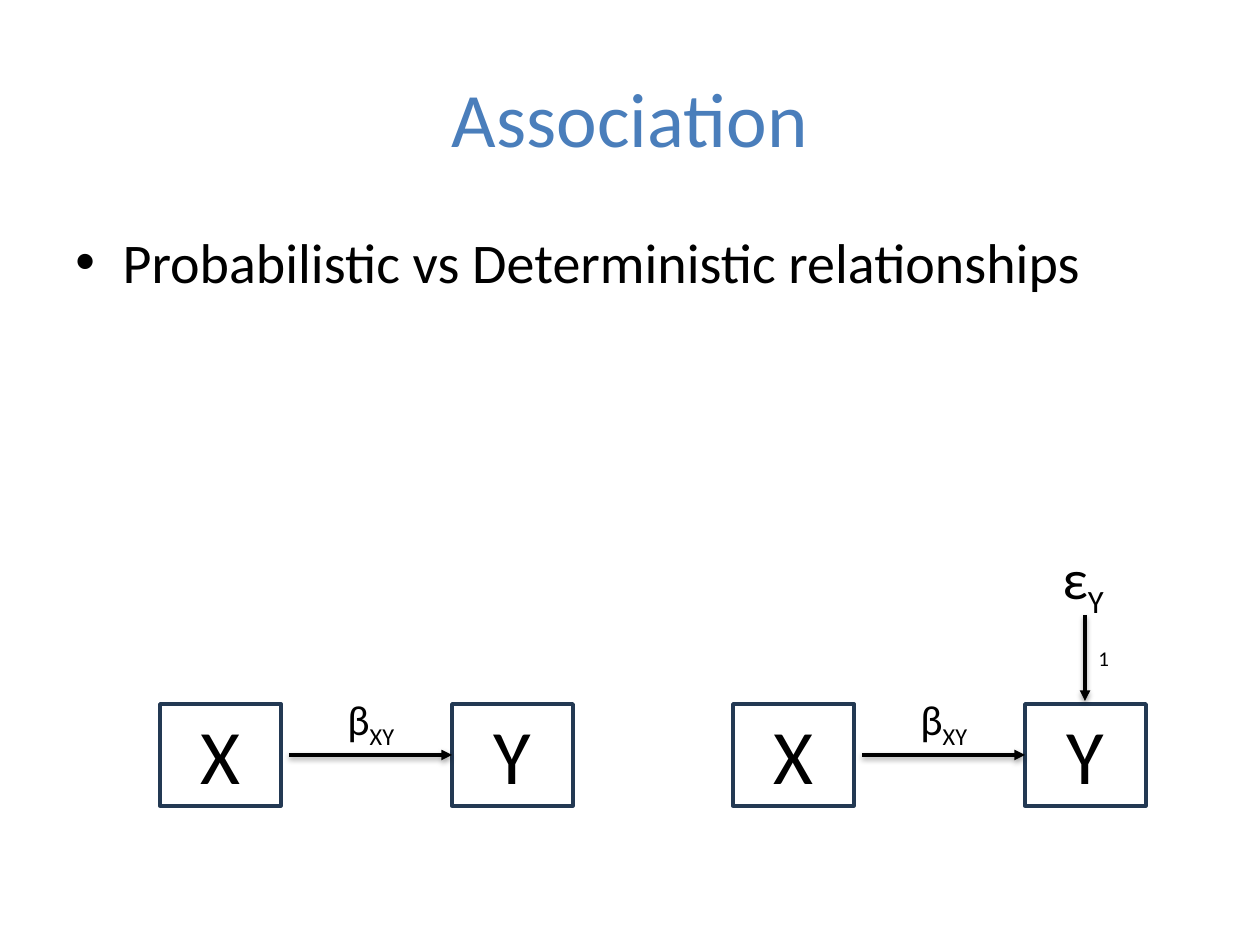
from pptx import Presentation
from pptx.dml.color import RGBColor
from pptx.enum.shapes import MSO_CONNECTOR, MSO_SHAPE
from pptx.enum.text import MSO_ANCHOR, MSO_AUTO_SIZE, PP_ALIGN
from pptx.oxml import parse_xml
from pptx.oxml.ns import nsdecls, qn
from pptx.util import Emu, Pt

STRAIGHT = MSO_CONNECTOR.STRAIGHT
RECTANGLE = MSO_SHAPE.RECTANGLE
MIDDLE = MSO_ANCHOR.MIDDLE
TOP = MSO_ANCHOR.TOP
GROW = MSO_AUTO_SIZE.SHAPE_TO_FIT_TEXT
FIXED = MSO_AUTO_SIZE.NONE
CENTER = PP_ALIGN.CENTER
LEFT = PP_ALIGN.LEFT

PX_PER_INCH = 126
LEFT_SIDE = 1
BOX_WIDTH, BOX_HEIGHT, BOX_TOP = 121, 102, 704
BOX_STEP = 292
MODEL_LEFTS = (160, 733)


def px(length):
    return Emu(round(length * 914400 / PX_PER_INCH))


def color(value):
    return RGBColor.from_string(value)


def apply(target, values):
    for name, value in values.items():
        setattr(target, name, value)


class SlideBuilder:
    font_name = "Calibri"
    text_color = "000000"
    title_color = "4A7EBB"
    box_color = "233953"
    line_width = Pt(2)

    def __init__(self, presentation):
        self.slide = presentation.slides.add_slide(presentation.slide_layouts[5])

    def fill_text(self, shape, text, size, align=LEFT, subscript="", hex_color=None):
        paragraph = shape.text_frame.paragraphs[0]
        paragraph.alignment = align
        for part, baseline in ((text, None), (subscript, "-25000")):
            if not part:
                continue
            run = paragraph.add_run()
            run.text = part
            apply(run.font, {"name": self.font_name, "size": Pt(size)})
            run.font.color.rgb = color(hex_color or self.text_color)
            if baseline:
                run._r.get_or_add_rPr().set("baseline", baseline)
        return paragraph

    def title(self, text, left, top, width, height):
        shape = self.slide.shapes.title
        apply(shape, {"left": px(left), "top": px(top),
                      "width": px(width), "height": px(height)})
        apply(shape.text_frame, {"word_wrap": True, "vertical_anchor": MIDDLE})
        self.fill_text(shape, text, 44, CENTER, hex_color=self.title_color)

    def text(self, text, left, top, width, height, size,
             align=LEFT, subscript="", wrap=False, auto_size=GROW):
        shape = self.slide.shapes.add_textbox(px(left), px(top), px(width), px(height))
        apply(shape.text_frame, {"word_wrap": wrap, "auto_size": auto_size,
                                 "vertical_anchor": TOP})
        return self.fill_text(shape, text, size, align, subscript)

    def bullet(self, text, left, top, width, height, size):
        paragraph = self.text(text, left, top, width, height, size,
                              wrap=True, auto_size=FIXED)
        paragraph.space_before = Pt(size * 0.2)
        properties = paragraph._p.get_or_add_pPr()
        properties.set("marL", "342900")
        properties.set("indent", "-342900")
        properties.append(parse_xml(f'<a:buFont {nsdecls("a")} typeface="Arial"/>'))
        properties.append(parse_xml(f'<a:buChar {nsdecls("a")} char="•"/>'))

    def box(self, letter, left):
        shape = self.slide.shapes.add_shape(
            RECTANGLE, px(left), px(BOX_TOP), px(BOX_WIDTH), px(BOX_HEIGHT))
        shape.shadow.inherit = False
        shape.fill.background()
        shape.line.color.rgb = color(self.box_color)
        shape.line.width = self.line_width
        self.text(letter, left - 7, BOX_TOP - 3, BOX_WIDTH + 14, BOX_HEIGHT + 4,
                  44, CENTER, wrap=True)
        return shape

    def arrow(self, start, end, target=None):
        connector = self.slide.shapes.add_connector(
            STRAIGHT, *(px(value) for value in (*start, *end)))
        connector.line.color.rgb = color(self.text_color)
        connector.line.width = self.line_width
        if target is not None:
            connector.end_connect(target, LEFT_SIDE)
        properties = connector.element.spPr
        properties.find(qn("a:ln")).append(
            parse_xml(f'<a:tailEnd {nsdecls("a")} type="triangle"/>'))
        properties.append(parse_xml(
            f'<a:effectLst {nsdecls("a")}>'
            '<a:outerShdw blurRad="40000" dist="20000" dir="5400000" rotWithShape="0">'
            '<a:srgbClr val="000000"><a:alpha val="38000"/></a:srgbClr>'
            '</a:outerShdw></a:effectLst>'))

    def model(self, left):
        middle = BOX_TOP + BOX_HEIGHT // 2
        outcome_left = left + BOX_STEP
        self.box("X", left)
        outcome = self.box("Y", outcome_left)
        self.arrow((left + BOX_WIDTH + 8, middle), (outcome_left, middle), outcome)
        self.text("β", left + 175, 687, 77, 63, 24, subscript="XY")


def main():
    presentation = Presentation()
    presentation.slide_width = px(1260)
    presentation.slide_height = px(945)
    builder = SlideBuilder(presentation)
    builder.title("Association", 63, 38, 1134, 157)
    builder.bullet("Probabilistic vs Deterministic relationships",
                   63, 221, 1134, 698, 32)
    for left in MODEL_LEFTS:
        builder.model(left)
    builder.arrow((1085, 615), (1085, 701))
    builder.text("ε", 1050, 537, 70, 81, 32, subscript="Y")
    builder.text("1", 1086, 639, 37, 38, 12)
    presentation.save("out.pptx")


if __name__ == "__main__":
    main()
